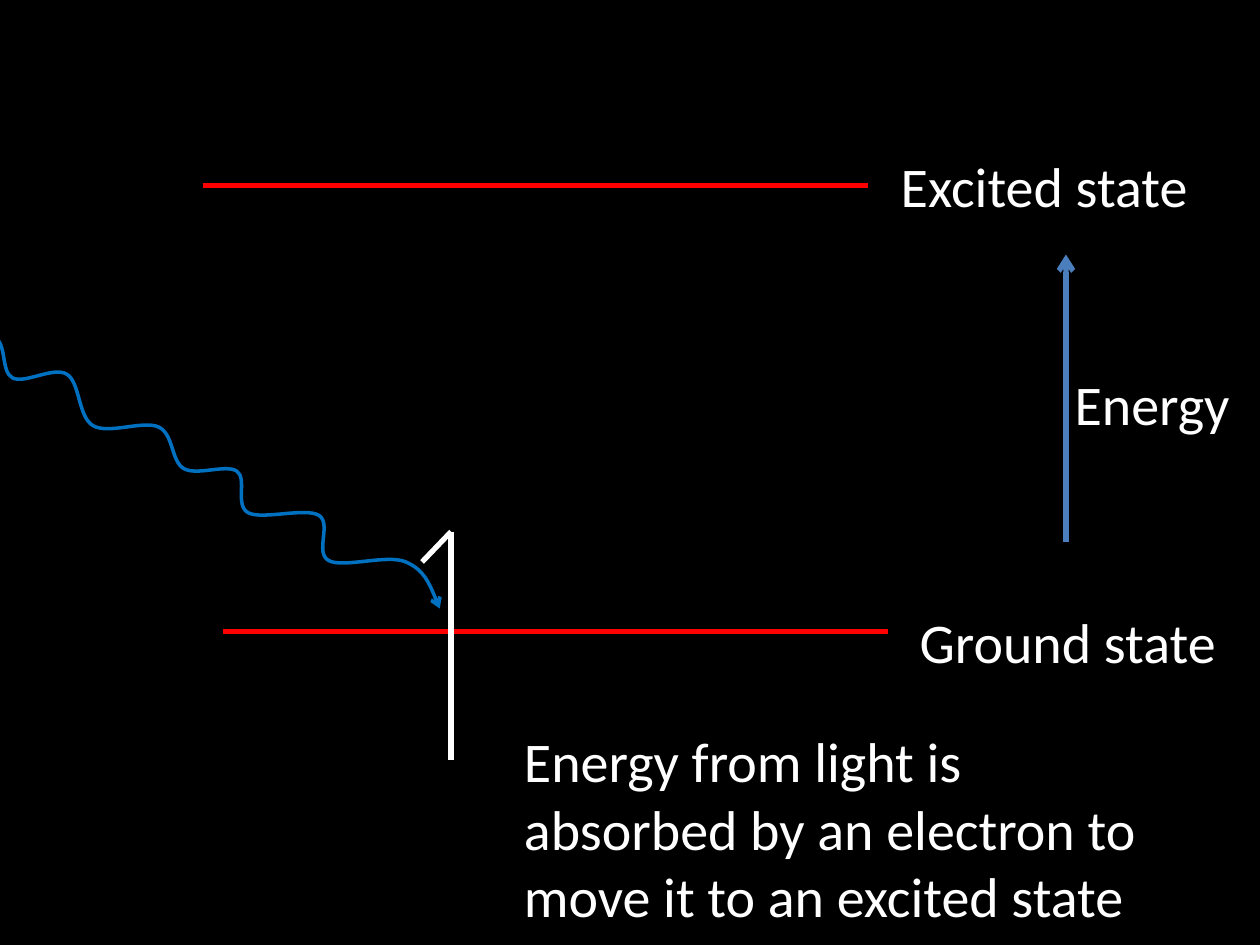
from lxml import etree
from pptx import Presentation
from pptx.dml.color import RGBColor
from pptx.enum.shapes import MSO_CONNECTOR
from pptx.oxml.ns import qn
from pptx.util import Inches, Pt

STRAIGHT = MSO_CONNECTOR.STRAIGHT
BLACK = RGBColor(0x00, 0x00, 0x00)
WHITE = RGBColor(0xFF, 0xFF, 0xFF)
RED = RGBColor(0xFF, 0x00, 0x00)
LIGHT_BLUE = RGBColor(0x00, 0x70, 0xC0)
ARROW_BLUE = RGBColor(0x4B, 0x7E, 0xBC)

COLUMNS, ROWS = 100, 75
LEVEL_LENGTH = 52.8
LABEL_HEIGHT = 6.4

WAVE_START = (-12.3, 14)
WAVE_END = (35.8, 53.6)
WAVE_POINTS = [
    (-13.2, 19.6), (-12.3, 23), (-8, 22.4), (-5.6, 26.7), (-0.5, 26.7),
    (1, 30), (5.3, 29.7), (7.4, 33.8), (12.6, 33.9), (14.6, 37.2),
    (18.8, 37.4), (19.7, 40.7), (25.3, 40.9), (26.1, 44.5),
    (32.2, 44.6), (34.9, 48.3),
]


def smooth_controls(before, start, end, after):
    first = tuple(b + (c - a) / 6 for a, b, c in zip(before, start, end))
    second = tuple(c - (d - b) / 6 for b, c, d in zip(start, end, after))
    return [first, second, end]


class Diagram:
    font = "Calibri"
    text_size = Pt(32)

    def __init__(self, prs):
        self.slide = prs.slides.add_slide(prs.slide_layouts[6])
        self.column = prs.slide_width / COLUMNS
        self.row = prs.slide_height / ROWS
        fill = self.slide.background.fill
        fill.solid()
        fill.fore_color.rgb = BLACK

    def place(self, x, y):
        return round(x * self.column), round(y * self.row)

    def stroke(self, s, color, width, arrow):
        s.line.color.rgb = color
        s.line.width = Pt(width)
        properties = s.element.spPr
        if arrow:
            etree.SubElement(properties.find(qn("a:ln")), qn("a:tailEnd"), type="arrow")
        etree.SubElement(properties, qn("a:effectLst"))

    def line(self, start, end, color, arrow=False, group=None):
        shapes = (group or self.slide).shapes
        s = shapes.add_connector(STRAIGHT, *self.place(*start), *self.place(*end))
        self.stroke(s, color, 3, arrow)

    def level(self, x, y):
        self.line((x, y), (x + LEVEL_LENGTH, y), RED)

    def electron(self, x, top, bottom):
        group = self.slide.shapes.add_group_shape()
        self.line((x - 2.3, top + 2.4), (x, top), WHITE, group=group)
        self.line((x, top), (x, bottom), WHITE, group=group)

    def wave(self, points, lead_in, lead_out, color):
        padded = [lead_in, *points, lead_out]
        curve = []
        for quad in zip(padded, padded[1:], padded[2:], padded[3:]):
            curve += smooth_controls(*quad)
        builder = self.slide.shapes.build_freeform(*self.place(*points[0]))
        builder.add_line_segments([self.place(*p) for p in curve], close=False)
        s = builder.convert_to_shape()
        s.fill.background()
        self.stroke(s, color, 2, True)
        segments = list(s.element.iter(qn("a:lnTo")))
        for i in range(0, len(segments), 3):
            triple = segments[i:i + 3]
            bezier = etree.Element(qn("a:cubicBezTo"))
            triple[0].addprevious(bezier)
            for segment in triple:
                bezier.append(segment[0])
                segment.getparent().remove(segment)

    def text(self, x, y, width, height, words):
        s = self.slide.shapes.add_textbox(*self.place(x, y), *self.place(width, height))
        tf = s.text_frame
        tf.word_wrap = True
        r = tf.paragraphs[0].add_run()
        r.text = words
        r.font.name = self.font
        r.font.size = self.text_size
        r.font.color.rgb = WHITE


def main():
    prs = Presentation()
    prs.slide_width, prs.slide_height = Inches(10), Inches(7.5)
    diagram = Diagram(prs)
    diagram.level(17.7, 50.1)
    diagram.electron(35.8, 42.2, 60.3)
    diagram.level(16.1, 14.7)
    diagram.wave(WAVE_POINTS, WAVE_START, WAVE_END, LIGHT_BLUE)
    diagram.text(72, 47.7, 26.8, LABEL_HEIGHT, "Ground state")
    diagram.text(70.5, 11.5, 29.5, LABEL_HEIGHT, "Excited state")
    diagram.text(40.6, 57.2, 52.8, 17.2,
                 "Energy from light is absorbed by an electron to move it to an excited state")
    diagram.line((84.6, 43), (84.6, 20.2), ARROW_BLUE, arrow=True)
    diagram.text(84.3, 28.8, 15.7, LABEL_HEIGHT, "Energy")
    prs.save("out.pptx")


if __name__ == "__main__":
    main()
